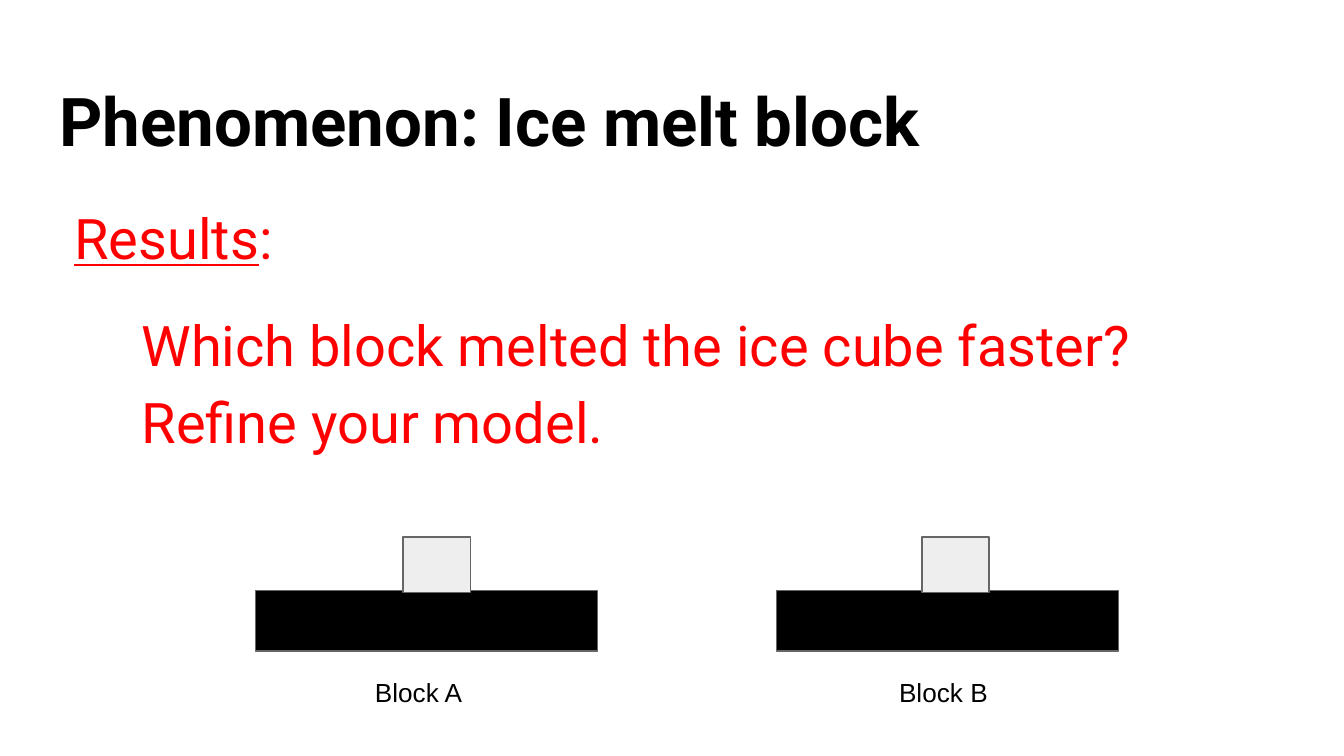
"""Build the ice melt block results slide."""
from dataclasses import dataclass

from pptx import Presentation
from pptx.dml.color import RGBColor
from pptx.enum.shapes import MSO_SHAPE
from pptx.enum.text import MSO_ANCHOR, PP_ALIGN
from pptx.slide import Slide
from pptx.text.text import TextFrame, _Paragraph
from pptx.util import Emu, Pt

EMU_PER_PX = 4572
BLACK = RGBColor(0x00, 0x00, 0x00)
RED = RGBColor(0xFF, 0x00, 0x00)
ICE = RGBColor(0xEE, 0xEE, 0xEE)
OUTLINE = RGBColor(0x66, 0x66, 0x66)


@dataclass(frozen=True)
class Area:
    left: int
    top: int
    width: int
    height: int

    def emu(self) -> tuple[Emu, ...]:
        return tuple(px(value) for value in (self.left, self.top, self.width, self.height))


@dataclass(frozen=True)
class MeltTest:
    label: str
    block_left: int
    ice_left: int
    label_left: int


TESTS = (
    MeltTest("Block A", 380, 600, 460),
    MeltTest("Block B", 1156, 1372, 1241),
)
QUESTIONS = ("Which block melted the ice cube faster?", "Refine your model.")


def px(value: int) -> Emu:
    return Emu(value * EMU_PER_PX)


def add_box(page: Slide, area: Area) -> TextFrame:
    frame = page.shapes.add_textbox(*area.emu()).text_frame
    frame.word_wrap = True
    frame.vertical_anchor = MSO_ANCHOR.TOP
    frame.margin_left = frame.margin_right = px(20)
    frame.margin_top = frame.margin_bottom = px(20)
    return frame


def add_span(para: _Paragraph, text: str, *, size: int, font: str = "Roboto",
             color: RGBColor = BLACK, bold: bool = False, underline: bool = False) -> None:
    span = para.add_run()
    span.text = text
    span.font.name = font
    span.font.size = Pt(size)
    span.font.color.rgb = color
    span.font.bold = bold
    span.font.underline = underline


def add_rectangle(page: Slide, area: Area, fill: RGBColor) -> None:
    shape = page.shapes.add_shape(MSO_SHAPE.RECTANGLE, *area.emu())
    shape.shadow.inherit = False
    shape.fill.solid()
    shape.fill.fore_color.rgb = fill
    shape.line.color.rgb = OUTLINE
    shape.line.width = Pt(0.75)


def add_test(page: Slide, test: MeltTest) -> None:
    add_rectangle(page, Area(test.block_left, 879, 509, 90), BLACK)
    add_rectangle(page, Area(test.ice_left, 799, 100, 83), ICE)
    para = add_box(page, Area(test.label_left, 986, 326, 58)).paragraphs[0]
    para.alignment = PP_ALIGN.CENTER
    add_span(para, test.label, size=14, font="Arial")


def add_results(page: Slide) -> None:
    frame = add_box(page, Area(91, 268, 1864, 748))
    heading = frame.paragraphs[0]
    heading.line_spacing = 1.15
    add_span(heading, "Results", size=30, color=RED, underline=True)
    add_span(heading, ":", size=30, color=RED)
    for index, question in enumerate(QUESTIONS):
        para = frame.add_paragraph()
        para.line_spacing = 1.15
        para.space_before = Pt(0 if index else 16)
        para._p.get_or_add_pPr().set("marL", str(px(100)))
        add_span(para, question, size=30, color=RED)


def main() -> None:
    deck = Presentation()
    deck.slide_width, deck.slide_height = px(2000), px(1125)
    page = deck.slides.add_slide(deck.slide_layouts[6])
    title = add_box(page, Area(69, 98, 1864, 126)).paragraphs[0]
    add_span(title, "Phenomenon: Ice melt block", size=36, bold=True)
    for test in TESTS:
        add_test(page, test)
    add_results(page)
    deck.save("out.pptx")


if __name__ == "__main__":
    main()
